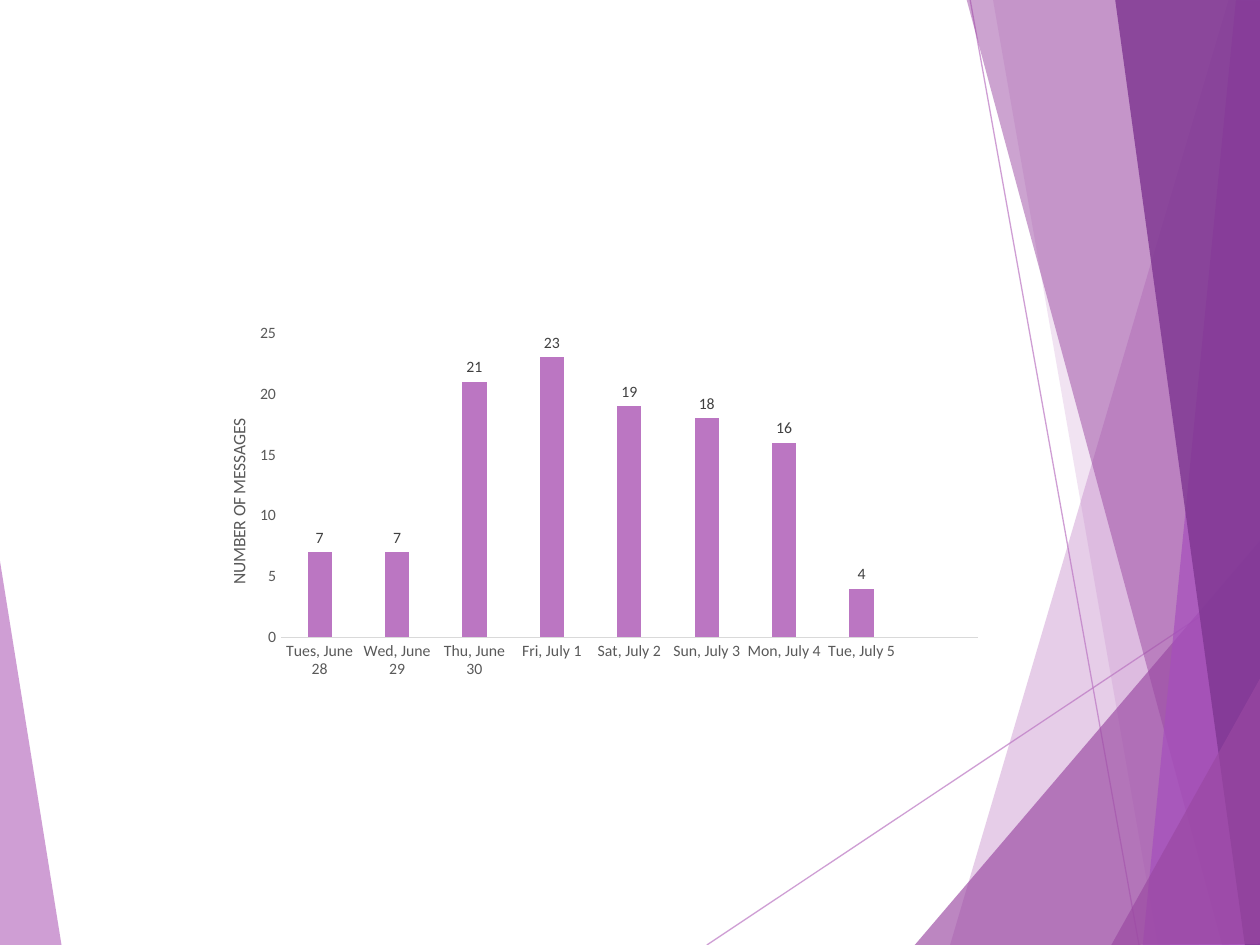
import pptx
import pptx.chart.data
import pptx.dml.color
import pptx.enum.chart
import pptx.enum.shapes
import pptx.oxml
import pptx.oxml.ns
import pptx.util
from lxml import etree
from pptx.util import Inches

COLORS = {
    "orchid": "BB76C2",
    "purple": "9A48A2",
    "violet": "A64FBD",
    "plum": "7F3792",
    "text": "595959",
    "label": "404040",
    "axis": "D9D9D9",
}
FONT = "Calibri"
MESSAGES = {
    "Tues, June 28": 7,
    "Wed, June 29": 7,
    "Thu, June 30": 21,
    "Fri, July 1": 23,
    "Sat, July 2": 19,
    "Sun, July 3": 18,
    "Mon, July 4": 16,
    "Tue, July 5": 4,
    "": None,
}
LINES = [((5.61, 7.5), (10.01, 4.57)), ((7.7, 0), (9.04, 7.5))]
FACETS = [
    ("orchid", 70, [(-0.01, 4.39), (0.49, 7.51), (-0.01, 7.5)]),
    ("orchid", 36, [(9.75, 0), (7.54, 7.5), (10.02, 7.51), (10.01, 0.01)]),
    ("orchid", 20, [(7.88, -0.01), (9.19, 7.5), (10.01, 7.5), (10.01, -0.01)]),
    ("purple", 66, [(7.26, 7.5), (10, 4.29), (10.01, 7.5)]),
    ("purple", 50, [(7.67, -0.01), (9.7, 7.5), (10.01, 7.49), (10.01, -0.01)]),
    ("violet", 70, [(9.81, -0.01), (9.07, 7.5), (10.01, 7.5), (10, -0.01)]),
    ("plum", 82, [(8.85, -0.01), (9.88, 7.5), (10.02, 7.5), (10, -0.01)]),
    ("purple", 66, [(8.82, 7.5), (10.02, 5.35), (10.02, 7.49)]),
]


def rgb(name):
    return pptx.dml.color.RGBColor.from_string(COLORS[name])


def format_font(font, size=9, color="text", bold=False):
    font.name = FONT
    font.size = pptx.util.Pt(size)
    font.bold = bold
    font.color.rgb = rgb(color)


def write_text(text_frame, text, **text_format):
    paragraph = text_frame.paragraphs[0]
    run = paragraph.add_run()
    run.text = text
    format_font(run.font, **text_format)


def set_opacity(shape, percent):
    for color in shape._element.spPr.iter(pptx.oxml.ns.qn("a:srgbClr")):
        alpha = etree.SubElement(color, pptx.oxml.ns.qn("a:alpha"))
        alpha.set("val", str(percent * 1000))


def add_line(slide, left, top, start, end):
    line = slide.shapes.add_connector(
        pptx.enum.shapes.MSO_CONNECTOR.STRAIGHT,
        Inches(left + start[0]), Inches(top + start[1]),
        Inches(left + end[0]), Inches(top + end[1]),
    )
    line.line.color.rgb = rgb("orchid")
    line.line.width = pptx.util.Pt(0.75)
    set_opacity(line, 70)
    etree.SubElement(line._element.spPr, pptx.oxml.ns.qn("a:effectLst"))


def add_facet(slide, left, top, color, opacity, corners):
    points = [(Inches(left + x), Inches(top + y)) for x, y in corners]
    builder = slide.shapes.build_freeform(*points[0])
    builder.add_line_segments(points[1:], close=True)
    facet = builder.convert_to_shape()
    facet.shadow.inherit = False
    facet.fill.solid()
    facet.fill.fore_color.rgb = rgb(color)
    facet.line.fill.background()
    set_opacity(facet, opacity)


def add_backdrop(slide, left, top):
    add_facet(slide, left, top, *FACETS[0])
    for start, end in LINES:
        add_line(slide, left, top, start, end)
    for facet in FACETS[1:]:
        add_facet(slide, left, top, *facet)


def set_plot_layout(chart, **fractions):
    plot_area = chart._chartSpace.chart.plotArea
    for old_layout in plot_area.findall(pptx.oxml.ns.qn("c:layout")):
        plot_area.remove(old_layout)
    layout = etree.Element(pptx.oxml.ns.qn("c:layout"))
    manual = etree.SubElement(layout, pptx.oxml.ns.qn("c:manualLayout"))
    settings = {"layoutTarget": "inner", "xMode": "edge", "yMode": "edge", **fractions}
    for name, value in settings.items():
        etree.SubElement(manual, pptx.oxml.ns.qn(f"c:{name}")).set("val", str(value))
    plot_area.insert(0, layout)


def format_axis(axis):
    axis.has_major_gridlines = False
    axis.major_tick_mark = pptx.enum.chart.XL_TICK_MARK.NONE
    axis.minor_tick_mark = pptx.enum.chart.XL_TICK_MARK.NONE
    format_font(axis.tick_labels.font)


def add_message_chart(slide, left, top, width, height):
    data = pptx.chart.data.CategoryChartData()
    data.categories = list(MESSAGES)
    data.add_series("Series 1", list(MESSAGES.values()))
    chart = slide.shapes.add_chart(
        pptx.enum.chart.XL_CHART_TYPE.COLUMN_CLUSTERED,
        Inches(left), Inches(top), Inches(width), Inches(height), data,
    ).chart
    chart.has_legend = False
    chart.has_title = False
    format_font(chart.font, size=10)
    set_plot_layout(chart, x=0.07, y=0.19, w=0.86, h=0.68)

    format_axis(chart.category_axis)
    chart.category_axis.format.line.color.rgb = rgb("axis")
    chart.category_axis.format.line.width = pptx.util.Pt(0.75)
    value_axis = chart.value_axis
    format_axis(value_axis)
    value_axis.format.line.fill.background()
    value_axis.minimum_scale, value_axis.maximum_scale = 0, 25
    value_axis.major_unit = 5
    write_text(value_axis.axis_title.text_frame, "NUMBER OF MESSAGES", size=10)

    plot = chart.plots[0]
    plot.vary_by_categories = False
    plot.gap_width = 219
    plot.overlap = -27
    series = plot.series[0]
    series.format.fill.solid()
    series.format.fill.fore_color.rgb = rgb("orchid")
    labels = series.data_labels
    labels.show_value = True
    labels.position = pptx.enum.chart.XL_LABEL_POSITION.OUTSIDE_END
    format_font(labels.font, color="label")


def main():
    presentation = pptx.Presentation()
    presentation.slide_width = Inches(10)
    presentation.slide_height = Inches(7.5)
    slide = presentation.slides.add_slide(presentation.slide_layouts[6])
    add_backdrop(slide, 0, 0)
    add_message_chart(slide, 1.78, 1.97, 6.43, 3.55)
    presentation.save("out.pptx")


if __name__ == "__main__":
    main()
